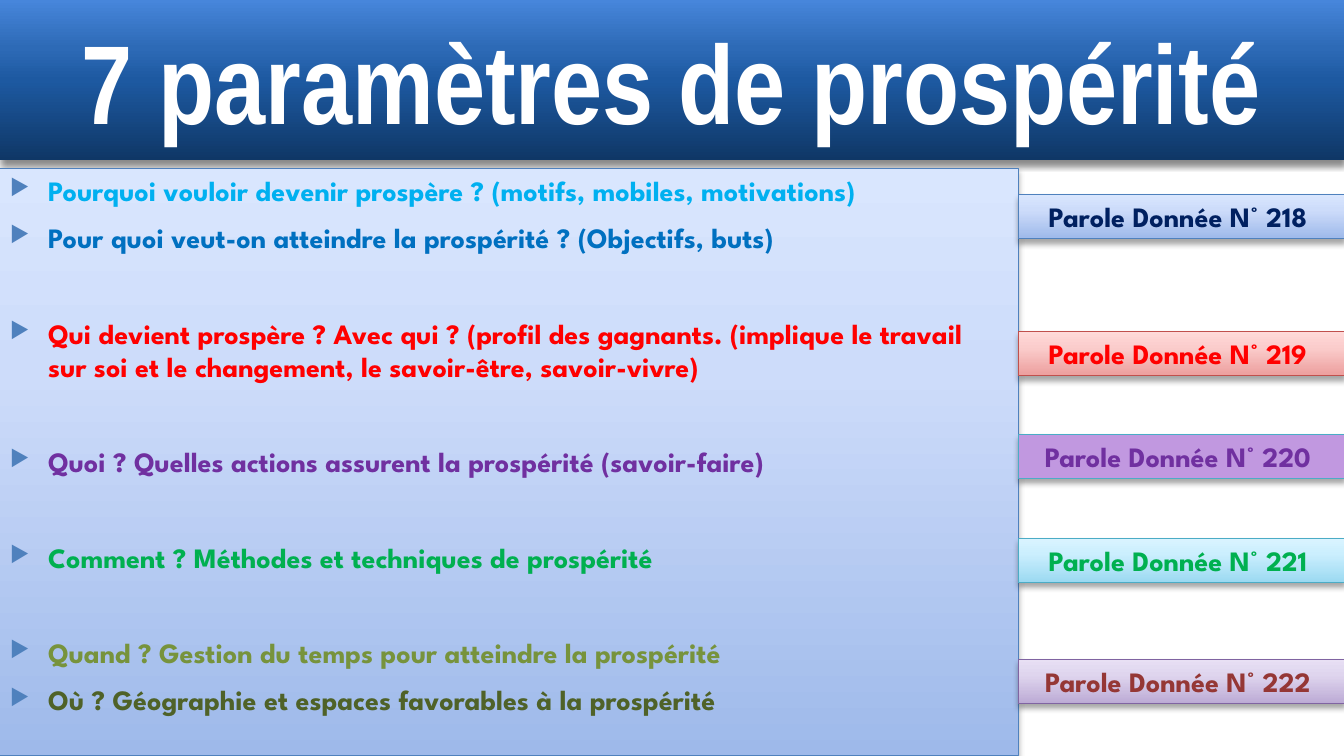
from lxml.etree import SubElement
from pptx import Presentation
from pptx.dml.color import RGBColor
from pptx.enum.shapes import MSO_SHAPE as Shape
from pptx.enum.text import MSO_ANCHOR as Anchor, MSO_AUTO_SIZE as AutoSize, PP_ALIGN as Align
from pptx.oxml.ns import qn
from pptx.util import Inches, Pt

TITLE = "7 paramètres de prospérité"
CLOSE, APART = 10, 44
QUESTIONS = [
    ("Pourquoi vouloir devenir prospère ? (motifs, mobiles, motivations)", "00B0F0", 0),
    ("Pour quoi veut-on atteindre la prospérité ? (Objectifs, buts)", "0070C0", CLOSE),
    ("Qui devient prospère ? Avec qui ? (profil des gagnants. (implique le travail "
     "sur soi et le changement, le savoir-être, savoir-vivre)", "FF0000", APART),
    ("Quoi ? Quelles actions assurent la prospérité (savoir-faire)", "7030A0", APART),
    ("Comment ? Méthodes et techniques de prospérité", "00B050", APART),
    ("Quand ? Gestion du temps pour atteindre la prospérité", "77933C", APART),
    ("Où ? Géographie et espaces favorables à la prospérité", "4F6228", CLOSE),
]
NAVY = [(0, "0F3766"), (50, "1D59A1"), (70, "2D6AB6"), (100, "4786DB")]
BLUE = [(0, "9EB9EA"), (65, "CDDCFA"), (100, "D9E6FE")]
RED = [(0, "EC9E9D"), (65, "FBCDCC"), (100, "FFD9D9")]
AQUA = [(0, "9BD9F1"), (65, "CBEFFE"), (100, "DAF4FF")]
MAUVE = [(0, "BCABD5"), (65, "DFD5EE"), (100, "E8E0F4")]
EPISODES = [
    (218, 1.93, BLUE, "4F81BD", "002060"),
    (219, 3.29, RED, "C0504D", "FF0000"),
    (220, 4.31, "C198E0", "4BACC6", "7030A0"),
    (221, 5.34, AQUA, "4BACC6", "00B050"),
    (222, 6.54, MAUVE, "8064A2", "953735"),
]
WIDTH, HEIGHT = 13.33, 7.5
QUESTIONS_TOP, QUESTIONS_WIDTH = 1.67, 10.1
ACCENT = "4F81BD"


def color(value):
    return RGBColor.from_string(value)


def add(parent, tag, **attributes):
    return SubElement(parent, qn(tag), {key: str(value) for key, value in attributes.items()})


def panel(left, top, width, height, fill, line=None, shadow=(35, 4, 3)):
    box = slide.shapes.add_shape(
        Shape.RECTANGLE, Inches(left), Inches(top), Inches(width), Inches(height))
    if isinstance(fill, str):
        box.fill.solid()
        box.fill.fore_color.rgb = color(fill)
    else:
        box.fill.gradient()
        box.fill.gradient_angle = 90
        stops = box._element.spPr.find(".//" + qn("a:gsLst"))
        for stop in list(stops):
            stops.remove(stop)
        for position, value in fill:
            add(add(stops, "a:gs", pos=position * 1000), "a:srgbClr", val=value)
    if line:
        box.line.color.rgb = color(line)
        box.line.width = Pt(0.75)
    else:
        box.line.fill.background()
    opacity, blur, distance = shadow
    box.shadow.inherit = False
    outer = add(box._element.spPr.find(qn("a:effectLst")), "a:outerShdw",
                blurRad=Pt(blur), dist=Pt(distance), dir=5400000, rotWithShape=0)
    add(add(outer, "a:srgbClr", val="000000"), "a:alpha", val=opacity * 1000)
    box.text_frame.word_wrap = True
    return box


def write(paragraph, text, ink, size=20, font="League Spartan", align=Align.CENTER,
          before=0, bullet=None):
    paragraph.alignment = align
    paragraph.space_before = Pt(before)
    if bullet:
        properties = paragraph._p.get_or_add_pPr()
        properties.set("marL", str(Inches(0.38)))
        properties.set("indent", str(Inches(-0.38)))
        add(add(properties, "a:buClr"), "a:srgbClr", val=ACCENT)
        add(properties, "a:buSzPct", val=80000)
        add(properties, "a:buChar", char=bullet)
    run = paragraph.add_run()
    run.text = text
    run.font.name = font
    run.font.size = Pt(size)
    run.font.bold = True
    run.font.color.rgb = color(ink)


deck = Presentation()
deck.slide_width, deck.slide_height = Inches(WIDTH), Inches(HEIGHT)
slide = deck.slides.add_slide(deck.slide_layouts[6])

banner = panel(0, 0, WIDTH, 1.59, NAVY, shadow=(45, 5, 3)).text_frame
banner.vertical_anchor = Anchor.MIDDLE
write(banner.paragraphs[0], TITLE, "FFFFFF", size=80, font="Arial Narrow")

questions = panel(0, QUESTIONS_TOP, QUESTIONS_WIDTH, HEIGHT - QUESTIONS_TOP, BLUE, ACCENT).text_frame
questions.vertical_anchor = Anchor.TOP
for index, (question, ink, before) in enumerate(QUESTIONS):
    paragraph = questions.add_paragraph() if index else questions.paragraphs[0]
    write(paragraph, question, ink, align=Align.LEFT, before=before, bullet="▶")

for number, top, fill, line, ink in EPISODES:
    episode = panel(QUESTIONS_WIDTH, top, 3.24, 0.44, fill, line).text_frame
    episode.vertical_anchor = Anchor.TOP
    episode.word_wrap = False
    episode.auto_size = AutoSize.SHAPE_TO_FIT_TEXT
    write(episode.paragraphs[0], f"Parole Donnée N° {number} ", ink)

deck.save("out.pptx")
